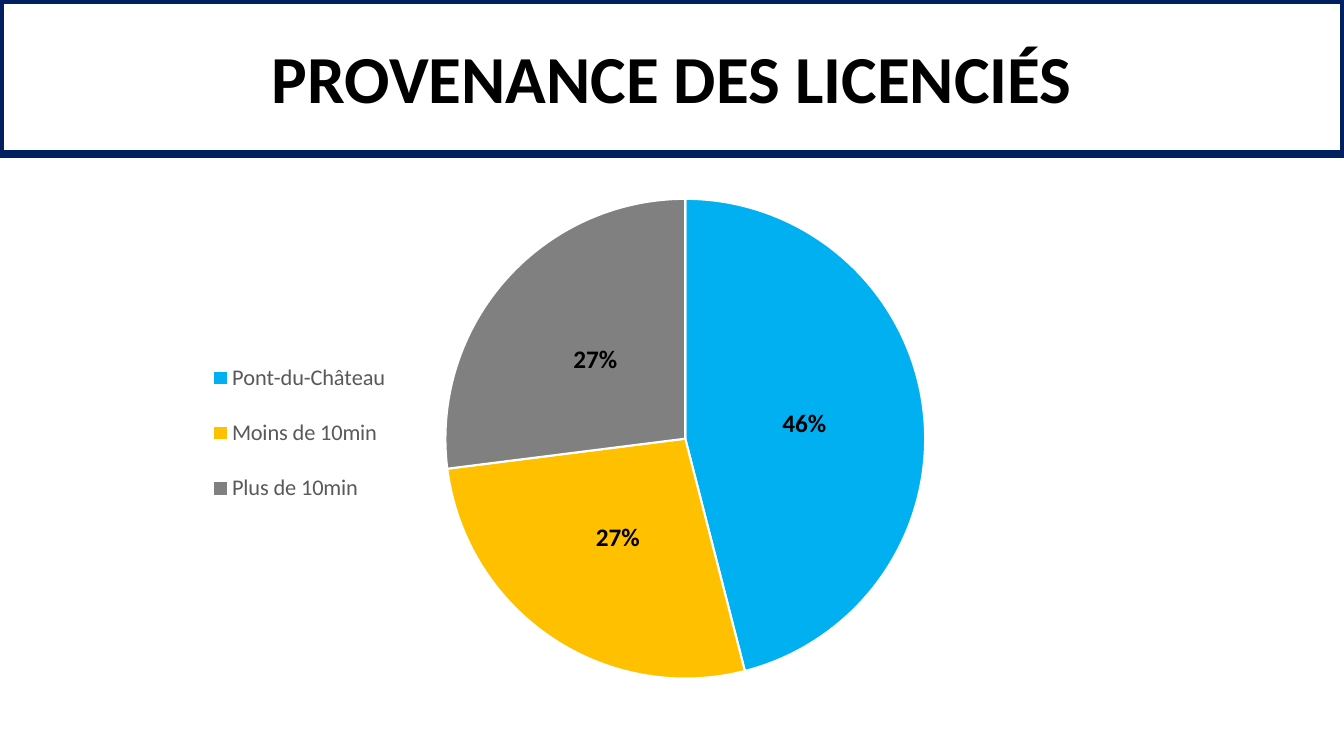
from dataclasses import dataclass

import pptx
import pptx.chart.data
import pptx.dml.color
import pptx.enum.chart
import pptx.enum.shapes
import pptx.enum.text
import pptx.oxml
import pptx.oxml.ns
import pptx.util
from pptx.util import Pt


@dataclass(frozen=True)
class Theme:
    font: str = "Calibri"
    white: str = "FFFFFF"
    black: str = "000000"
    navy: str = "002060"
    legend_grey: str = "595959"
    title_size: int = 48
    label_size: int = 18
    legend_size: int = 16
    chart_size: int = 10


THEME = Theme()

# Category, share in percent, slice colour
ORIGINS = [
    ("Pont-du-Château", 46, "00B0F0"),
    ("Moins de 10min", 27, "FFC000"),
    ("Plus de 10min", 27, "808080"),
]


def rgb(color):
    return pptx.dml.color.RGBColor.from_string(color)


def style_font(font, size, color, bold=False):
    font.name = THEME.font
    font.size = Pt(size)
    font.bold = bold
    font.color.rgb = rgb(color)


def set_layout(parent, before, x, y, width, height, inner=False):
    """Place a chart part by fractions of the chart area."""
    for layout in parent.findall(pptx.oxml.ns.qn("c:layout")):
        parent.remove(layout)
    target = '<c:layoutTarget val="inner"/>' if inner else ""
    layout = pptx.oxml.parse_xml(
        f'<c:layout {pptx.oxml.ns.nsdecls("c")}><c:manualLayout>{target}'
        '<c:xMode val="edge"/><c:yMode val="edge"/>'
        f'<c:x val="{x}"/><c:y val="{y}"/>'
        f'<c:w val="{width}"/><c:h val="{height}"/>'
        "</c:manualLayout></c:layout>"
    )
    parent.find(pptx.oxml.ns.qn(before)).addprevious(layout)


def add_title_banner(slide, text, left, top, width, height):
    banner = slide.shapes.add_shape(
        pptx.enum.shapes.MSO_SHAPE.RECTANGLE, left, top, width, height
    )
    banner.shadow.inherit = False
    banner.fill.solid()
    banner.fill.fore_color.rgb = rgb(THEME.white)
    banner.line.color.rgb = rgb(THEME.navy)
    banner.line.width = Pt(6)
    frame = banner.text_frame
    frame.word_wrap = True
    frame.vertical_anchor = pptx.enum.text.MSO_ANCHOR.MIDDLE
    paragraph = frame.paragraphs[0]
    paragraph.alignment = pptx.enum.text.PP_ALIGN.CENTER
    run = paragraph.add_run()
    run.text = text
    style_font(run.font, THEME.title_size, THEME.black, bold=True)


def add_pie(slide, slices, left, top, width, height):
    data = pptx.chart.data.CategoryChartData()
    data.categories = [name for name, _, _ in slices]
    data.add_series("Licenciés", [share for _, share, _ in slices])
    chart = slide.shapes.add_chart(
        pptx.enum.chart.XL_CHART_TYPE.PIE, left, top, width, height, data
    ).chart
    chart.has_title = False
    style_font(chart.font, THEME.chart_size, THEME.black)

    # Slices
    plot = chart.plots[0]
    plot.vary_by_categories = True
    for index, (_, _, color) in enumerate(slices):
        point_format = plot.series[0].points[index].format
        point_format.fill.solid()
        point_format.fill.fore_color.rgb = rgb(color)
        point_format.line.color.rgb = rgb(THEME.white)
        point_format.line.width = Pt(1.5)

    # Percentages
    labels = plot.series[0].data_labels
    labels.show_value = False
    labels.show_percentage = True
    labels.number_format = "0%"
    labels.number_format_is_linked = False
    labels.position = pptx.enum.chart.XL_LABEL_POSITION.CENTER
    style_font(labels.font, THEME.label_size, THEME.black, bold=True)

    # Legend
    chart.has_legend = True
    legend = chart.legend
    legend.position = pptx.enum.chart.XL_LEGEND_POSITION.LEFT
    legend.include_in_layout = False
    style_font(legend.font, THEME.legend_size, THEME.legend_grey)

    # Placement inside the chart area
    plot_area = chart.element.find(".//" + pptx.oxml.ns.qn("c:plotArea"))
    legend_area = chart.element.find(".//" + pptx.oxml.ns.qn("c:legend"))
    set_layout(plot_area, "c:pieChart", 0.26, 0.03, 0.46, 0.87, inner=True)
    set_layout(legend_area, "c:overlay", 0.03, 0.28, 0.18, 0.35)


def main():
    presentation = pptx.Presentation()
    presentation.slide_width = Pt(960)
    presentation.slide_height = Pt(540)
    slide = presentation.slides.add_slide(presentation.slide_layouts[6])

    add_title_banner(
        slide, "PROVENANCE DES LICENCIÉS", Pt(0), Pt(0), Pt(960), Pt(110)
    )
    add_pie(slide, ORIGINS, Pt(124.5), Pt(129), Pt(745), Pt(396.5))

    presentation.save("out.pptx")


if __name__ == "__main__":
    main()
